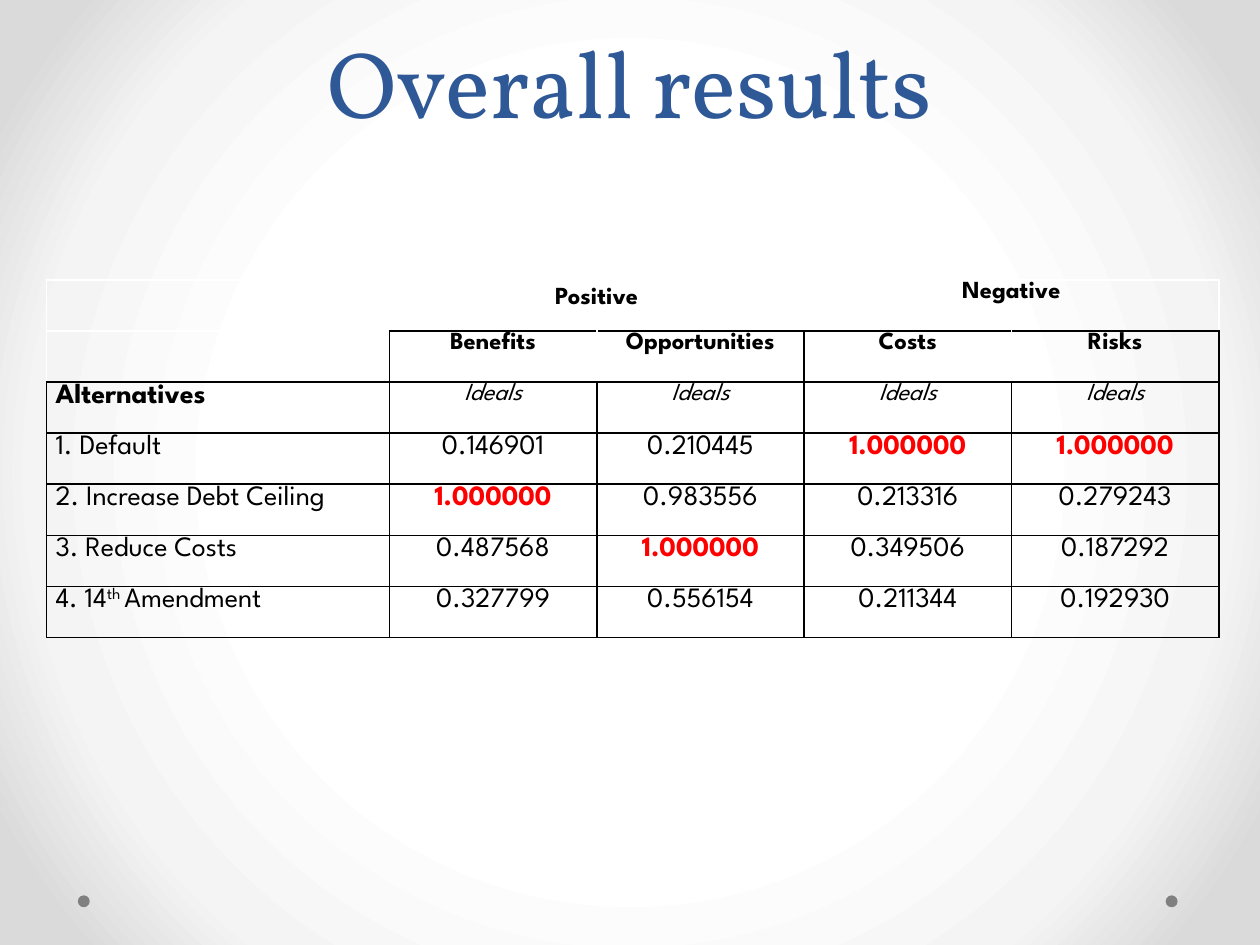
from dataclasses import dataclass

from lxml import etree
from pptx import Presentation
from pptx.dml.color import RGBColor
from pptx.enum.shapes import MSO_SHAPE
from pptx.enum.text import MSO_ANCHOR, PP_ALIGN
from pptx.oxml.ns import qn
from pptx.util import Cm, Pt

OVAL = MSO_SHAPE.OVAL
BOTTOM = MSO_ANCHOR.BOTTOM
LEFT, CENTER = PP_ALIGN.LEFT, PP_ALIGN.CENTER

COLORS = {
    "title": "2F5897",
    "text": "000000",
    "best": "FF0000",
    "dot": "808080",
    "line": "000000",
    "faint_line": "FFFFFF",
}
BACKGROUND_STOPS = [(50, "FFFFFF"), (76, "F4F4F4"), (92, "DADADA")]
TITLE_FONT, TABLE_FONT = "Vollkorn", "League Spartan"
BEST_VALUE = "1.000000"
LABEL_WIDTH, VALUE_WIDTH, ROW_HEIGHT = 6.91, 4.18, 1.03


@dataclass
class Dot:
    left: float
    top: float = 18.05
    size: float = 0.24


@dataclass
class Style:
    size: int
    bold: bool = False
    italic: bool = False
    color: str = "text"


HEADING = Style(14, bold=True)
IDEALS = Style(14, italic=True)
ALTERNATIVES = Style(16, bold=True)
BODY = Style(16)
BEST = Style(16, bold=True, color="best")

DOTS = [Dot(23.5), Dot(1.57)]
ROWS = [
    ["", "Positive", "", "Negative", ""],
    ["", "Benefits", "Opportunities", "Costs", "Risks"],
    ["Alternatives"] + ["Ideals"] * 4,
    ["1. Default", "0.146901", "0.210445", "1.000000", "1.000000"],
    ["2. Increase Debt Ceiling", "1.000000", "0.983556", "0.213316", "0.279243"],
    ["3. Reduce Costs", "0.487568", "1.000000", "0.349506", "0.187292"],
    ["4. 14^th ^Amendment", "0.327799", "0.556154", "0.211344", "0.192930"],
]


def add_background(s) -> None:
    fill = s.background.fill
    fill.gradient()
    grad = s.background._cSld.find(".//" + qn("a:gradFill"))
    for child in list(grad):
        grad.remove(child)
    stops = etree.SubElement(grad, qn("a:gsLst"))
    for percent, color in BACKGROUND_STOPS:
        stop = etree.SubElement(stops, qn("a:gs"), pos=str(percent * 1000))
        etree.SubElement(stop, qn("a:srgbClr"), val=color)
    circle = etree.SubElement(grad, qn("a:path"), path="circle")
    etree.SubElement(circle, qn("a:fillToRect"), dict.fromkeys("ltrb", "50000"))


def add_dot(s, dot: Dot) -> None:
    sp = s.shapes.add_shape(OVAL, Cm(dot.left), Cm(dot.top), Cm(dot.size), Cm(dot.size))
    sp.shadow.inherit = False
    sp.fill.solid()
    sp.fill.fore_color.rgb = RGBColor.from_string(COLORS["dot"])
    sp.line.fill.background()


def add_run(p, text: str, font: str, style: Style):
    r = p.add_run()
    r.text = text
    values = {"name": font, "size": Pt(style.size), "bold": style.bold, "italic": style.italic}
    for name, value in values.items():
        setattr(r.font, name, value)
    r.font.color.rgb = RGBColor.from_string(COLORS[style.color])
    return r


def add_title(s, text: str) -> None:
    tf = s.shapes.add_textbox(Cm(1.27), Cm(0), Cm(22.86), Cm(2.9)).text_frame
    tf.word_wrap = True
    tf.vertical_anchor = BOTTOM
    p = tf.paragraphs[0]
    p.alignment = CENTER
    p.line_spacing = Pt(58)
    add_run(p, text, TITLE_FONT, Style(54, color="title"))


def cell_style(row: int, col: int, text: str) -> Style:
    if row < 2:
        return HEADING
    if row == 2:
        return IDEALS if col else ALTERNATIVES
    return BEST if text == BEST_VALUE else BODY


def is_faint(row: int, col: int, side: str) -> bool:
    """Tell whether a border is white: around the empty corner and inside heading pairs."""
    if row == 0:
        return col == 0 or side != "B"
    if row == 1:
        if col == 0:
            return side in "LT"
        return side == ("R" if col % 2 else "L")
    return False


def set_borders(cell, row: int, col: int) -> None:
    tc_pr = cell._tc.get_or_add_tcPr()
    for i, side in enumerate("LRTB"):
        ln = etree.Element(qn("a:ln" + side), w=str(Pt(1)))
        fill = etree.SubElement(ln, qn("a:solidFill"))
        color = COLORS["faint_line" if is_faint(row, col, side) else "line"]
        etree.SubElement(fill, qn("a:srgbClr"), val=color)
        tc_pr.insert(i, ln)


def fill_cell(cell, row: int, col: int, text: str) -> None:
    """Format a cell; text between ^ marks is raised."""
    cell.fill.background()
    set_borders(cell, row, col)
    if text != "Positive":
        cell.margin_left = cell.margin_right = Cm(0.18)
        cell.margin_top = cell.margin_bottom = 0
    p = cell.text_frame.paragraphs[0]
    p.alignment = CENTER if col else LEFT
    p.line_spacing = 1.07
    style = cell_style(row, col, text)
    p.font.size = Pt(style.size)
    if not text:
        return
    for i, part in enumerate(text.split("^")):
        r = add_run(p, part, TABLE_FONT, style)
        if i % 2:
            r.font._element.set("baseline", "30000")


def add_results_table(s) -> None:
    width = LABEL_WIDTH + 4 * VALUE_WIDTH
    frame = s.shapes.add_table(len(ROWS), len(ROWS[0]), Cm(0.94), Cm(5.64),
                               Cm(width), Cm(ROW_HEIGHT * len(ROWS)))
    table = frame.table
    table.first_row = table.horz_banding = False
    for col, column in enumerate(table.columns):
        column.width = Cm(VALUE_WIDTH if col else LABEL_WIDTH)
    for row, texts in enumerate(ROWS):
        table.rows[row].height = Cm(ROW_HEIGHT)
        for col, text in enumerate(texts):
            fill_cell(table.cell(row, col), row, col, text)
    for col in (1, 3):
        table.cell(0, col).merge(table.cell(0, col + 1))


def main() -> None:
    prs = Presentation()
    prs.slide_width, prs.slide_height = Cm(25.4), Cm(19.05)
    s = prs.slides.add_slide(prs.slide_layouts[6])
    add_background(s)
    for dot in DOTS:
        add_dot(s, dot)
    add_title(s, "Overall results")
    add_results_table(s)
    prs.save("out.pptx")


if __name__ == "__main__":
    main()
